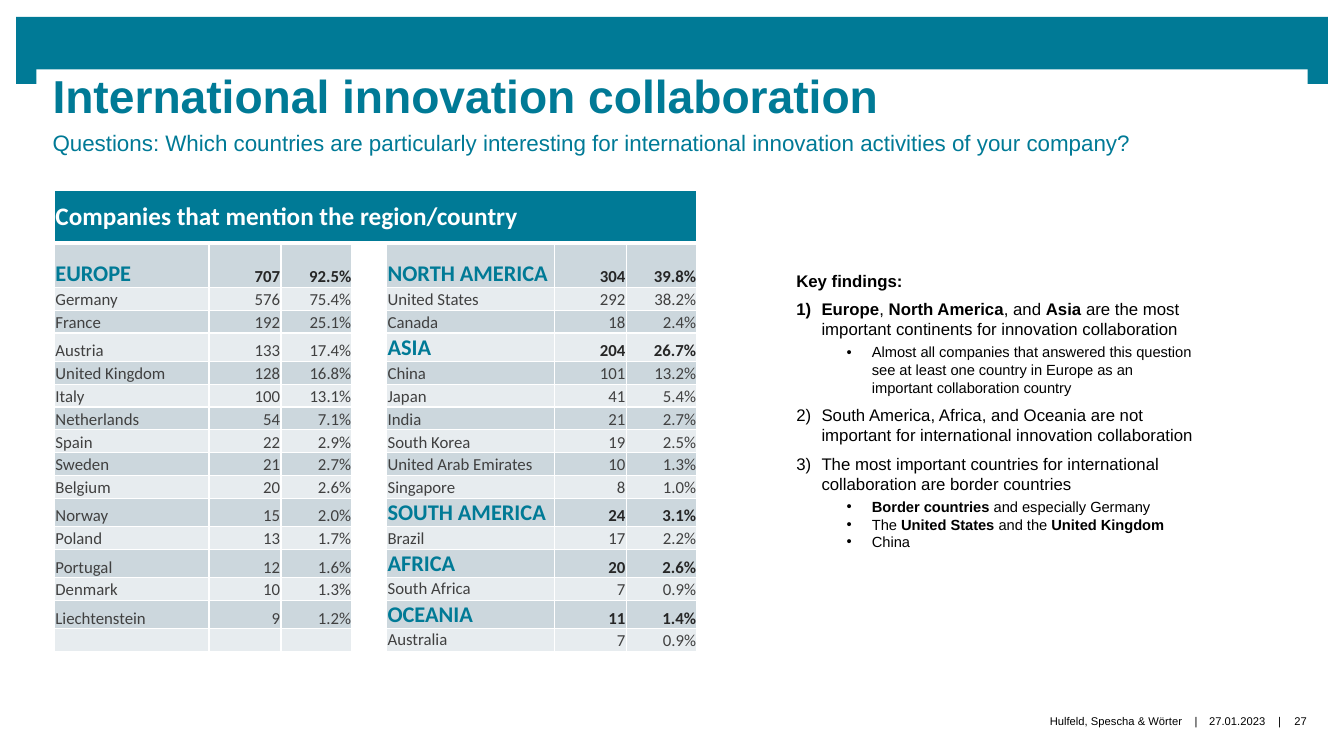
import pptx
import pptx.util
import pptx.dml.color
import pptx.enum.shapes
import pptx.enum.text
import pptx.oxml.ns
import lxml.etree

Pt = pptx.util.Pt
qn = pptx.oxml.ns.qn
ALIGN = pptx.enum.text.PP_ALIGN
ANCHOR = pptx.enum.text.MSO_ANCHOR
TEAL, WHITE, BLACK = "007A96", "FFFFFF", "000000"
BANDS = ["E7ECEF", "CCD7DD"]


def style(r, size, color, bold=False, name="Arial"):
    r.font.size = Pt(size)
    r.font.bold = bold
    r.font.name = name
    r.font.color.rgb = pptx.dml.color.RGBColor.from_string(color)


def border(cell, side, width):
    """Add a white border; side is L, R, T or B. Call before setting the fill."""
    ln = lxml.etree.SubElement(cell._tc.get_or_add_tcPr(), qn(f"a:ln{side}"), w=str(Pt(width)))
    fill = lxml.etree.SubElement(ln, qn("a:solidFill"))
    lxml.etree.SubElement(fill, qn("a:srgbClr"), val=WHITE)


prs = pptx.Presentation()
prs.slide_width, prs.slide_height = Pt(960), Pt(540)
s = prs.slides.add_slide(prs.slide_layouts[1])

# Frame at the top
for left, top, width, height in [(11.5, 12, 937, 37.5), (11.5, 47, 14.5, 13), (934, 47, 14.5, 13)]:
    sp = s.shapes.add_shape(pptx.enum.shapes.MSO_SHAPE.RECTANGLE,
                            Pt(left), Pt(top), Pt(width), Pt(height))
    sp.shadow.inherit = False
    sp.fill.solid()
    sp.fill.fore_color.rgb = pptx.dml.color.RGBColor.from_string(TEAL)
    sp.line.fill.background()

# Title and question
title = s.shapes.title
title.left, title.top, title.width, title.height = Pt(26), Pt(51.8), Pt(908), Pt(59.8)
tf = title.text_frame
tf.text = ("International innovation collaboration\n"
           "Questions: Which countries are particularly interesting for "
           "international innovation activities of your company?")
tf.auto_size = pptx.enum.text.MSO_AUTO_SIZE.NONE
tf.word_wrap = True
tf.vertical_anchor = ANCHOR.BOTTOM
tf.margin_left = tf.margin_right = Pt(11.5)
tf.margin_top = tf.margin_bottom = 0
for p, size, bold, before in zip(tf.paragraphs, [33, 16], [True, False], [0, 5]):
    p.alignment = ALIGN.LEFT
    p.space_before = Pt(before)
    style(p.runs[0], size, TEAL, bold)

# Table of regions and countries; region names are in capitals
EUROPE = [
    ("EUROPE", "707", "92.5%"), ("Germany", "576", "75.4%"), ("France", "192", "25.1%"),
    ("Austria", "133", "17.4%"), ("United Kingdom", "128", "16.8%"), ("Italy", "100", "13.1%"),
    ("Netherlands", "54", "7.1%"), ("Spain", "22", "2.9%"), ("Sweden", "21", "2.7%"),
    ("Belgium", "20", "2.6%"), ("Norway", "15", "2.0%"), ("Poland", "13", "1.7%"),
    ("Portugal", "12", "1.6%"), ("Denmark", "10", "1.3%"), ("Liechtenstein", "9", "1.2%"),
    ("", "", ""),
]
OTHERS = [
    ("NORTH AMERICA", "304", "39.8%"), ("United States", "292", "38.2%"), ("Canada", "18", "2.4%"),
    ("ASIA", "204", "26.7%"), ("China", "101", "13.2%"), ("Japan", "41", "5.4%"),
    ("India", "21", "2.7%"), ("South Korea", "19", "2.5%"), ("United Arab Emirates", "10", "1.3%"),
    ("Singapore", "8", "1.0%"), ("SOUTH AMERICA", "24", "3.1%"), ("Brazil", "17", "2.2%"),
    ("AFRICA", "20", "2.6%"), ("South Africa", "7", "0.9%"), ("OCEANIA", "11", "1.4%"),
    ("Australia", "7", "0.9%"),
]
HEADING = "Companies that mention the region/country"
rows = [(HEADING,) + ("",) * 6] + [e + ("",) + o for e, o in zip(EUROPE, OTHERS)]
widths = [110.3, 51.4, 50.8, 24.8, 119.6, 51.4, 50.6]
GAP = 3

frame = s.shapes.add_table(len(rows), len(widths), Pt(39), Pt(136.2), Pt(sum(widths)), Pt(328))
table = frame.table
table.first_row = table.horz_banding = False
table._tbl.tblPr.find(qn("a:tableStyleId")).text = "{2D5ABB26-0587-4C30-8999-92F81FD0307C}"
for column, width in zip(table.columns, widths):
    column.width = Pt(width)
for i, row in enumerate(rows):
    has_region = row[GAP + 1].isupper()
    table.rows[i].height = Pt({0: 37.4, 1: 31.7}.get(i, 19.7 if has_region else 16.3))
    for j, text in enumerate(row):
        cell = table.cell(i, j)
        cell.margin_left = cell.margin_right = cell.margin_top = Pt(0.6)
        cell.margin_bottom = 0
        top_aligned = text in ("South Africa", "Australia")
        cell.vertical_anchor = ANCHOR.MIDDLE if i == 0 else ANCHOR.TOP if top_aligned else ANCHOR.BOTTOM
        for side in "LRTB":
            border(cell, side, 3 if (i, side) in [(0, "B"), (1, "T")] else 1)
        if i and j == GAP:
            cell.fill.background()
        else:
            cell.fill.solid()
            cell.fill.fore_color.rgb = pptx.dml.color.RGBColor.from_string(BANDS[i % 2] if i else TEAL)
        p = cell.text_frame.paragraphs[0]
        if not text:
            lxml.etree.SubElement(p._p, qn("a:endParaRPr"), sz="800")
            continue
        p.text = text
        is_name = j in (0, GAP + 1)
        p.alignment = ALIGN.LEFT if is_name else ALIGN.RIGHT
        name = row[0] if j < GAP else row[GAP + 1]
        if i == 0:
            look = (18, WHITE, True)
        elif name.isupper():
            look = (16, TEAL, True) if is_name else (12, "262626", True)
        else:
            look = (12, "404040", False)
        style(p.runs[0], *look, "Calibri")
table.cell(0, 0).merge(table.cell(0, len(widths) - 1))

# Key findings: kind, space after, text with bold parts between **
findings = [
    ("heading", 6, "**Key findings:**"),
    ("number", 3, "**Europe**, **North America**, and **Asia **are the most important "
                  "continents for innovation collaboration"),
    ("bullet", 6, "Almost all companies that answered this question see at least one "
                  "country in Europe as an important collaboration country"),
    ("number", 6, "South America, Africa, and Oceania are not important for "
                  "international innovation collaboration"),
    ("number", 3, "The most important countries for international collaboration are "
                  "border countries"),
    ("bullet", 0, "**Border countries **and especially Germany"),
    ("bullet", 0, "The **United States **and the **United Kingdom**"),
    ("bullet", 0, "China"),
]
body = s.placeholders[1]
body.left, body.top, body.width, body.height = Pt(561.6), Pt(189.4), Pt(299.5), Pt(209.5)
tf = body.text_frame
tf.word_wrap = True
tf.auto_size = pptx.enum.text.MSO_AUTO_SIZE.NONE
tf.vertical_anchor = ANCHOR.TOP
for i, (kind, after, text) in enumerate(findings):
    p = tf.add_paragraph() if i else tf.paragraphs[0]
    pPr = p._p.get_or_add_pPr()
    margin = {"heading": 0, "number": 18, "bullet": 54}[kind]
    pPr.set("marL", str(Pt(margin)))
    pPr.set("indent", str(Pt(-18 if margin else 0)))
    if kind == "heading":
        lxml.etree.SubElement(pPr, qn("a:buNone"))
    else:
        lxml.etree.SubElement(pPr, qn("a:buFont"), typeface="Arial")
        if kind == "number":
            lxml.etree.SubElement(pPr, qn("a:buAutoNum"), type="arabicParenR")
        else:
            lxml.etree.SubElement(pPr, qn("a:buChar"), char="•")
            p.level = 1
    p.space_before = 0
    p.space_after = Pt(after)
    for k, part in enumerate(text.split("**")):
        if part:
            r = p.add_run()
            r.text = part
            style(r, 10.5 if kind == "bullet" else 12, BLACK, k % 2 == 1)

# Footer
for text, left, width, align in [
    ("Hulfeld, Spescha & Wörter", 26, 818.6, ALIGN.RIGHT),
    ("|", 849, 10.8, ALIGN.CENTER),
    ("27.01.2023", 859.7, 48.2, ALIGN.CENTER),
    ("|", 908.6, 10.8, ALIGN.CENTER),
    ("27", 915, 28, ALIGN.CENTER),
]:
    sp = s.shapes.add_textbox(Pt(left), Pt(496.8), Pt(width), Pt(36.4))
    tf = sp.text_frame
    tf.text = text
    tf.word_wrap = True
    tf.vertical_anchor = ANCHOR.MIDDLE
    tf.margin_left = tf.margin_right = tf.margin_top = tf.margin_bottom = 0
    p = tf.paragraphs[0]
    p.alignment = align
    style(p.runs[0], 8, BLACK)

prs.save("out.pptx")
